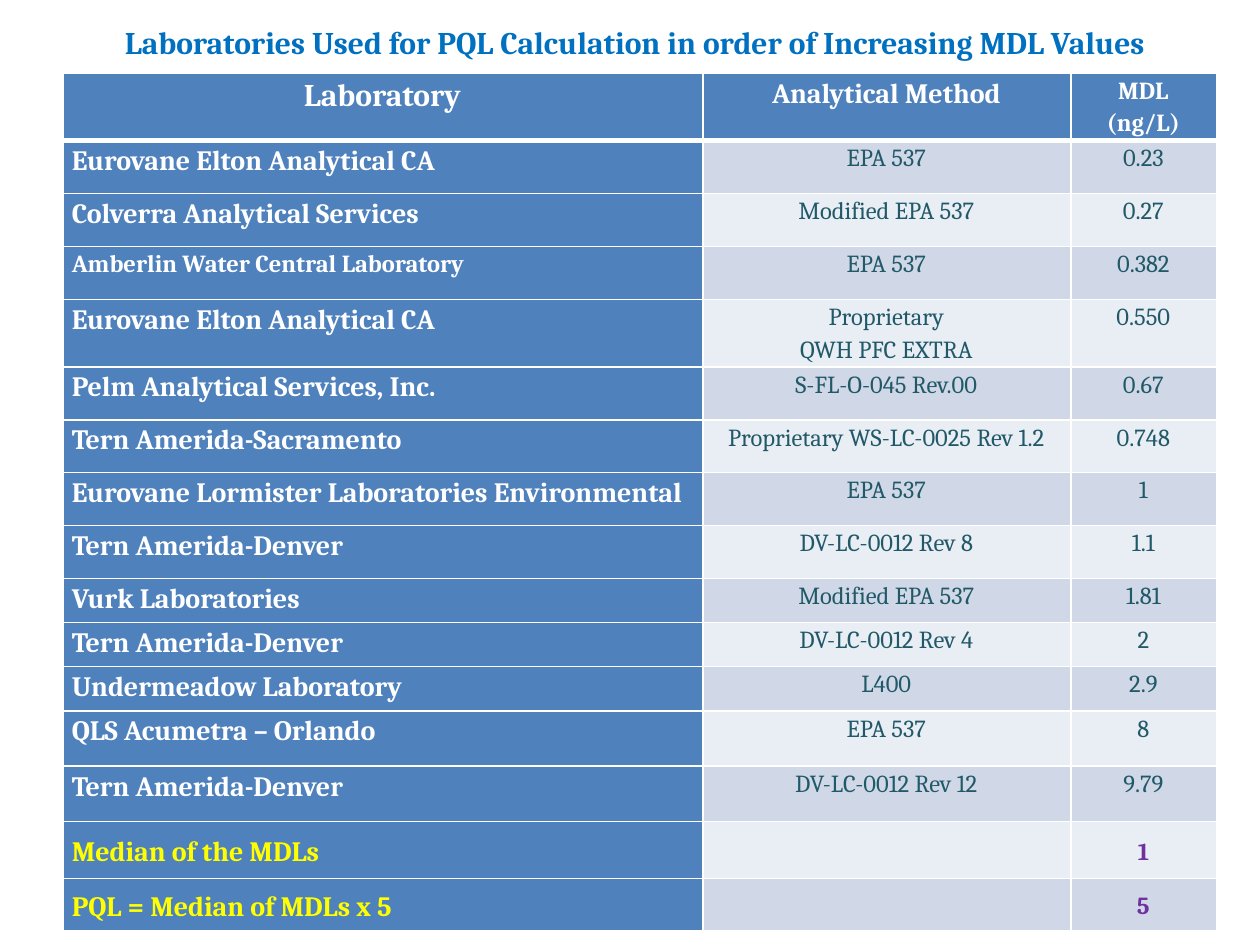
import pptx
import pptx.dml.color
import pptx.enum.text
import pptx.oxml.ns
import pptx.util
from lxml import etree

Inches = pptx.util.Inches
Pt = pptx.util.Pt
ALIGN = pptx.enum.text.PP_ALIGN
ANCHOR = pptx.enum.text.MSO_ANCHOR

FONT = "Cambria"
WHITE, BLUE, TEAL = "FFFFFF", "4F81BD", "215968"
YELLOW, PURPLE = "FFFF00", "7030A0"
BANDS = ["D0D8E8", "E9EDF4"]
COLS = [5.08, 2.92, 1.16]
SIZES = [16, 14, 14]
HEADS = [("Laboratory", 18), ("Analytical Method", 16), ("MDL (ng/L)", 14)]
# row height, laboratory, method, MDL
LABS = [
    (0.42, "Eurovane Elton Analytical CA", "EPA 537", "0.23"),
    (0.42, "Colverra Analytical Services", "Modified EPA 537", "0.27"),
    (0.42, "Amberlin Water Central Laboratory", "EPA 537", "0.382"),
    (0.45, "Eurovane Elton Analytical CA", "Proprietary\nQWH PFC EXTRA", "0.550"),
    (0.42, "Pelm Analytical Services, Inc.", "S-FL-O-045 Rev.00", "0.67"),
    (0.42, "Tern Amerida-Sacramento", "Proprietary WS-LC-0025 Rev 1.2", "0.748"),
    (0.42, "Eurovane Lormister Laboratories Environmental", "EPA 537", "1"),
    (0.42, "Tern Amerida-Denver", "DV-LC-0012 Rev 8", "1.1"),
    (0.35, "Vurk Laboratories", "Modified EPA 537", "1.81"),
    (0.35, "Tern Amerida-Denver", "DV-LC-0012 Rev 4", "2"),
    (0.35, "Undermeadow Laboratory", "L400", "2.9"),
    (0.44, "QLS Acumetra – Orlando", "EPA 537", "8"),
    (0.44, "Tern Amerida-Denver", "DV-LC-0012 Rev 12", "9.79"),
]
TOTALS = [
    (0.45, "Median of the MDLs", "", "1"),
    (0.42, "PQL = Median of MDLs x 5", "", "5"),
]
SMALL = "Amberlin Water Central Laboratory"


def paint(target, color):
    """Give a fill or a font colour its RGB value."""
    target.rgb = pptx.dml.color.RGBColor.from_string(color)


def apply(target, values):
    for name, value in values.items():
        setattr(target, name, value)


def write(frame, text, size, color, bold=True, align=ALIGN.CENTER, **spacing):
    """Write one paragraph for each line of text."""
    for i, line in enumerate(text.split("\n")):
        para = frame.add_paragraph() if i else frame.paragraphs[0]
        apply(para, {"alignment": align, **spacing})
        run = para.add_run()
        run.text = line
        apply(run.font, {"name": FONT, "size": Pt(size), "bold": bold})
        paint(run.font.color, color)


def border(cell, widths):
    """Draw white cell edges; widths holds points by tag."""
    props = cell._tc.get_or_add_tcPr()
    for i, (tag, width) in enumerate(widths.items()):
        line = etree.Element(pptx.oxml.ns.qn("a:" + tag), w=str(Pt(width)))
        fill = etree.SubElement(line, pptx.oxml.ns.qn("a:solidFill"))
        etree.SubElement(fill, pptx.oxml.ns.qn("a:srgbClr"), val=WHITE)
        props.insert(i, line)


def style(cell, color, top=1, bottom=1, anchor=ANCHOR.TOP):
    apply(cell, {
        "margin_left": Inches(0.07), "margin_right": Inches(0.08),
        "margin_top": 0, "margin_bottom": 0, "vertical_anchor": anchor,
    })
    cell.fill.solid()
    paint(cell.fill.fore_color, color)
    border(cell, {"lnL": 1, "lnR": 1, "lnT": top, "lnB": bottom})


def put(cell, text, size, color, **look):
    after = 0 if "\n" in text else 10
    write(cell.text_frame, text, size, color,
          line_spacing=1.15, space_after=Pt(after), **look)


def title(slide):
    box = slide.shapes.add_textbox(
        Inches(0.58), Inches(0.08), Inches(8.92), Inches(0.5))
    frame = box.text_frame
    apply(frame, {"word_wrap": True, "vertical_anchor": ANCHOR.MIDDLE})
    write(frame, "Laboratories Used for PQL Calculation in order of "
          "Increasing MDL Values", 18, "0070C0")


def body(table, row, texts, total):
    for col, text in enumerate(texts):
        cell = table.cell(row, col)
        style(cell, BANDS[(row - 1) % 2] if col else BLUE,
              top=3 if row == 1 else 1,
              anchor=ANCHOR.MIDDLE if total else ANCHOR.TOP)
        if not text:
            continue
        size = 14 if text == SMALL else SIZES[col]
        if col:
            put(cell, text, size, PURPLE if total else TEAL, bold=total)
        else:
            put(cell, text, size, YELLOW if total else WHITE, align=ALIGN.LEFT)


def grid(slide):
    rows = LABS + TOTALS
    highs = [0.45] + [row[0] for row in rows]
    table = slide.shapes.add_table(
        len(highs), len(COLS), Inches(0.5), Inches(0.58),
        Inches(sum(COLS)), Inches(sum(highs))).table
    for column, width in zip(table.columns, COLS):
        column.width = Inches(width)
    for line, high in zip(table.rows, highs):
        line.height = Inches(high)
    for col, (text, size) in enumerate(HEADS):
        style(table.cell(0, col), BLUE, bottom=3)
        put(table.cell(0, col), text, size, WHITE)
    for row, (_, *texts) in enumerate(rows, 1):
        body(table, row, texts, row > len(LABS))


def main():
    deck = pptx.Presentation()
    apply(deck, {"slide_width": Inches(10), "slide_height": Inches(7.5)})
    slide = deck.slides.add_slide(deck.slide_layouts[6])
    title(slide)
    grid(slide)
    deck.save("out.pptx")


if __name__ == "__main__":
    main()
